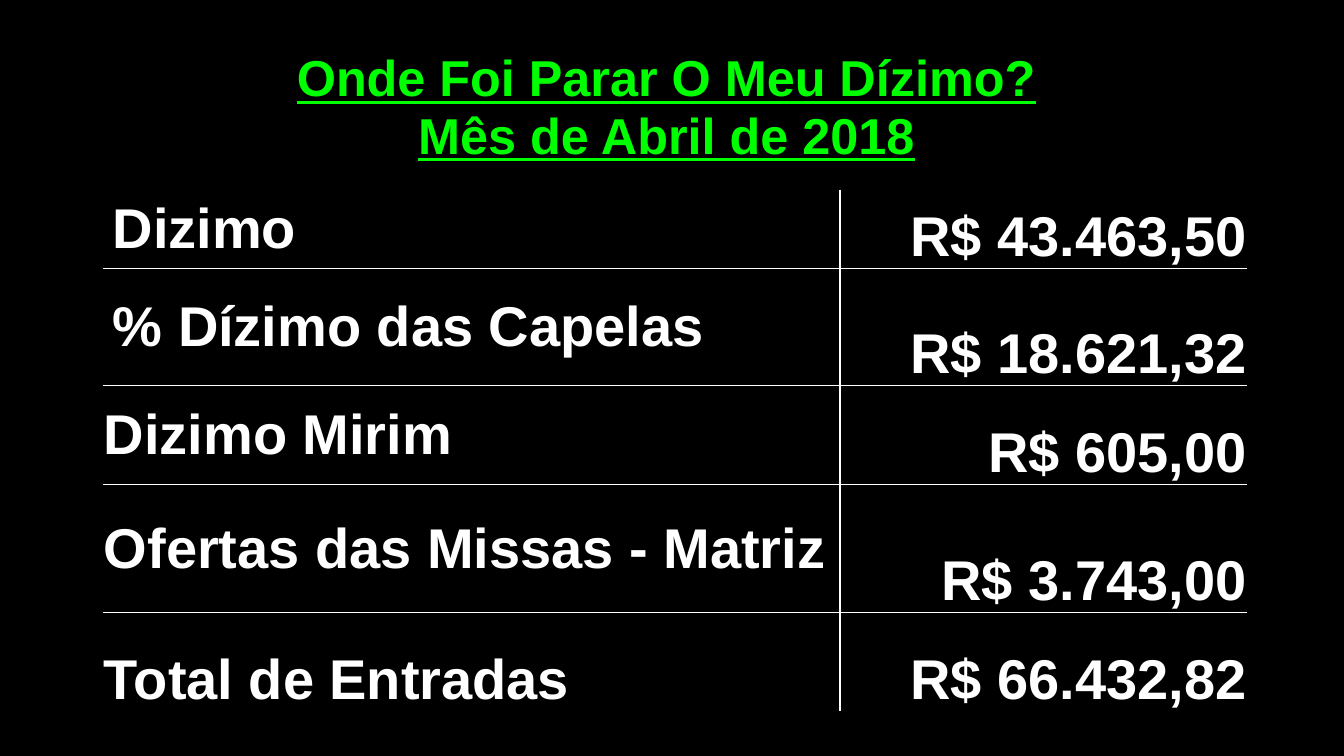
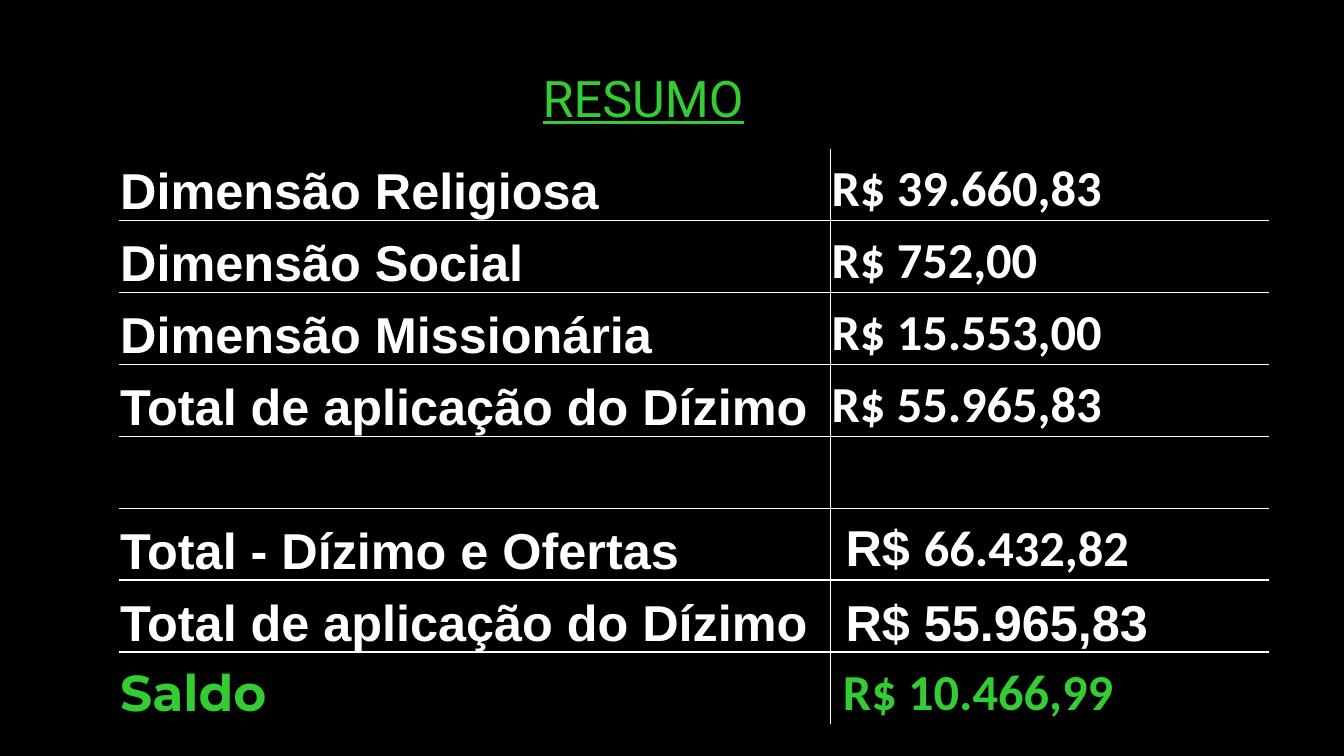
from dataclasses import dataclass, replace

from lxml import etree
from pptx import Presentation
from pptx.dml.color import RGBColor
from pptx.enum.text import MSO_ANCHOR, MSO_AUTO_SIZE, PP_ALIGN
from pptx.oxml.ns import qn
from pptx.util import Emu, Pt

LEFT, CENTER, RIGHT = PP_ALIGN.LEFT, PP_ALIGN.CENTER, PP_ALIGN.RIGHT
MIDDLE, BOTTOM = MSO_ANCHOR.MIDDLE, MSO_ANCHOR.BOTTOM
NO_AUTOFIT = MSO_AUTO_SIZE.NONE
EMU_PER_PX = 914400 / 192
TITLE_ONLY, BLANK = 5, 6


@dataclass(frozen=True)
class Theme:
    background: str = "000000"
    text: str = "FFFFFF"
    line: str = "FFFFFF"
    lime: str = "00FF00"
    green: str = "33CC33"
    sans: str = "Arial"
    figures: str = "Calibri"
    accent: str = "Montserrat"
    heading: str = "Roboto"
    title_size: int = 36
    income_size: int = 40
    summary_size: int = 36
    line_width: int = 1


THEME = Theme()


@dataclass(frozen=True)
class Cell:
    runs: tuple = ()  # (text, font) pairs
    size: int = THEME.summary_size
    color: str = THEME.text
    underline: bool = False
    align: PP_ALIGN = LEFT
    anchor: MSO_ANCHOR = BOTTOM
    margins: tuple = (2, 2, 2, 0)  # left, top, right, bottom


def px(n):
    return Emu(round(n * EMU_PER_PX))


def write(p, text, font=THEME.sans, size=THEME.title_size, color=THEME.text,
          bold=True, underline=False):
    r = p.add_run()
    r.text = text
    f = r.font
    f.name, f.size, f.bold, f.underline = font, Pt(size), bold, underline
    f.color.rgb = RGBColor.from_string(color)


def set_title(s, text, box, **fmt):
    """Place a centred, underlined title."""
    title = s.shapes.title
    title.left, title.top, title.width, title.height = map(px, box)
    tf = title.text_frame
    tf.auto_size, tf.vertical_anchor = NO_AUTOFIT, MIDDLE
    p = tf.paragraphs[0]
    p.alignment = CENTER
    write(p, text, underline=True, **fmt)


def set_borders(cell, visible):
    """Draw the visible sides (of L, R, T, B) and clear the others."""
    tc_pr = cell._tc.get_or_add_tcPr()
    for side in "LRTB":
        ln = etree.SubElement(tc_pr, qn(f"a:ln{side}"), w=str(Pt(THEME.line_width)))
        if side in visible:
            fill = etree.SubElement(ln, qn("a:solidFill"))
            etree.SubElement(fill, qn("a:srgbClr"), val=THEME.line)
        else:
            etree.SubElement(ln, qn("a:noFill"))


def fill_cell(cell, content):
    (cell.margin_left, cell.margin_top,
     cell.margin_right, cell.margin_bottom) = map(px, content.margins)
    cell.vertical_anchor = content.anchor
    p = cell.text_frame.paragraphs[0]
    p.alignment = content.align
    for text, font in content.runs:
        write(p, text, font=font, size=content.size, color=content.color,
              underline=content.underline)


def add_grid(s, left, top, widths, heights, rows, ruled=True, frame_height=None):
    """Add a table, ruled between its cells only or not at all."""
    frame = s.shapes.add_table(len(heights), len(widths), px(left), px(top),
                               px(sum(widths)), px(sum(heights)))
    table = frame.table
    table.first_row = table.horz_banding = False
    for column, width in zip(table.columns, widths):
        column.width = px(width)
    for row, height in zip(table.rows, heights):
        row.height = px(height)
    if frame_height:
        frame.height = px(frame_height)
    last_row, last_col = len(heights) - 1, len(widths) - 1
    for i, contents in enumerate(rows):
        for j, content in enumerate(contents):
            cell = table.cell(i, j)
            inner = {"L": j > 0, "R": j < last_col, "T": i > 0, "B": i < last_row}
            set_borders(cell, [side for side in inner if ruled and inner[side]])
            cell.fill.background()
            fill_cell(cell, content)


def cell(text, font=THEME.sans, **fmt):
    return Cell(((text, font),), **fmt)


def income_slide(prs):
    s = prs.slides.add_slide(prs.slide_layouts[BLANK])
    # Income by source
    label = Cell(size=THEME.income_size, anchor=MIDDLE)
    padded = replace(label, margins=(19, 10, 19, 10))
    total = replace(label, anchor=BOTTOM)
    entries = [
        (padded, "Dizimo", "43.463,50"),
        (padded, "% Dízimo das Capelas", "18.621,32"),
        (label, "Dizimo Mirim", "605,00"),
        (label, "Ofertas das Missas - Matriz", "3.743,00"),
        (total, "Total de Entradas", "66.432,82"),
    ]
    rows = [(replace(style, runs=((name, THEME.sans),)),
             cell(f"R$ {amount}", size=THEME.income_size, align=RIGHT))
            for style, name, amount in entries]
    add_grid(s, 196, 361, [1404, 776], [150, 223, 189, 243, 189], rows)
    # Heading, one line to a row
    heading = [(cell(line, size=THEME.title_size, color=THEME.lime,
                     underline=True, align=CENTER),)
               for line in ("Onde Foi Parar O Meu Dízimo?", "Mês de Abril de 2018")]
    add_grid(s, 463, 84, [1613], [121, 46], heading, ruled=False, frame_height=238)


def summary_slide(prs):
    s = prs.slides.add_slide(prs.slide_layouts[TITLE_ONLY])
    set_title(s, "RESUMO", (553, 117, 1344, 136),
              font=THEME.heading, color=THEME.green, bold=False)
    # Spending, then the balance
    spending = [
        ("Dimensão Religiosa", "39.660,83"),
        ("Dimensão Social", "752,00"),
        ("Dimensão Missionária", "15.553,00"),
        ("Total de aplicação do Dízimo", "55.965,83"),
    ]
    rows = [(cell(name), cell(f"R$ {amount}", THEME.figures))
            for name, amount in spending]
    rows += [
        (Cell(), Cell()),
        (cell("Total - Dízimo e Ofertas"),
         Cell(((" R$ ", THEME.sans), ("66.432,82", THEME.figures)))),
        (cell("Total de aplicação do Dízimo"), cell(" R$ 55.965,83")),
        (cell("Saldo", THEME.accent, color=THEME.green),
         cell(" R$ 10.466,99", THEME.figures, color=THEME.green)),
    ]
    add_grid(s, 227, 283, [1355, 835], [137] * len(rows), rows)


def main():
    prs = Presentation()
    prs.slide_width, prs.slide_height = px(2560), px(1440)
    # Shared background
    fill = prs.slide_master.background.fill
    fill.solid()
    fill.fore_color.rgb = RGBColor.from_string(THEME.background)
    income_slide(prs)
    summary_slide(prs)
    prs.save("out.pptx")


if __name__ == "__main__":
    main()
